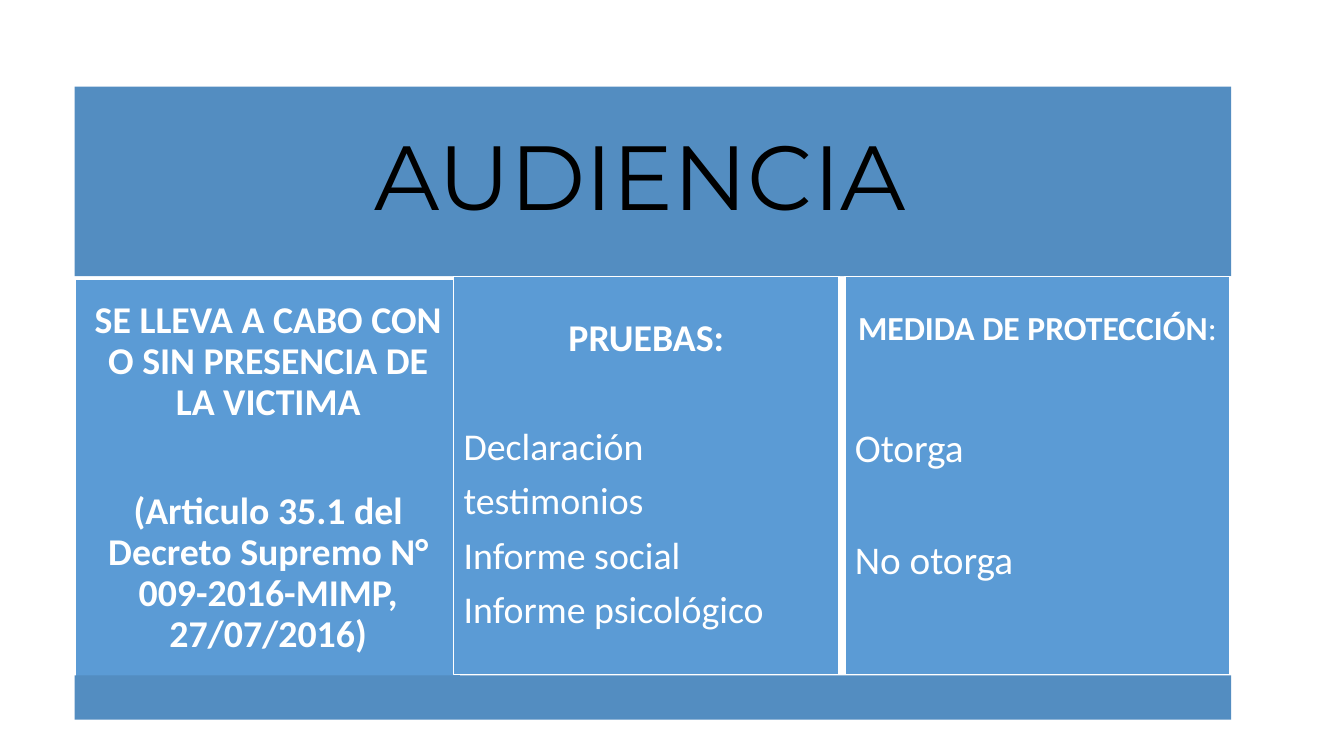
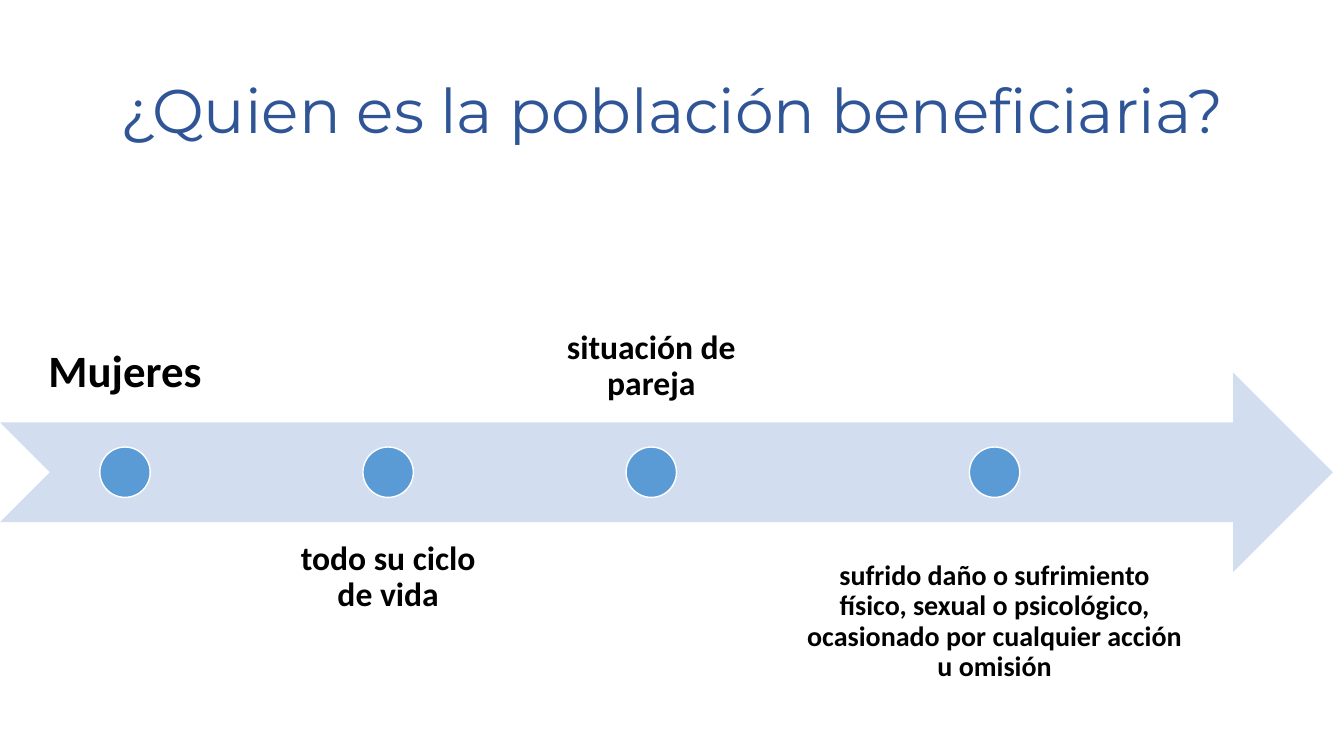
from pptx import Presentation
from pptx.dml.color import RGBColor
from pptx.enum.shapes import MSO_SHAPE as Shape
from pptx.enum.text import MSO_ANCHOR as Anchor, MSO_AUTO_SIZE as AutoSize, PP_ALIGN as Align
from pptx.util import Inches, Pt

COLORS = {
    "band": "538DC1",
    "panel": "5B9BD5",
    "arrow": "D2DEEF",
    "heading": "2F5597",
    "dark": "000000",
    "light": "FFFFFF",
}
TITLE_FONT, TEXT_FONT = "Montserrat", "Calibri"


def color(key):
    """Return the palette colour called key."""
    return RGBColor.from_string(COLORS[key])


def apply(target, values):
    """Set every attribute of target listed in values."""
    for attribute, value in values.items():
        setattr(target, attribute, value)


def place(shape, box):
    """Move a shape to a box of left, top, width and height in inches."""
    apply(shape, dict(zip(("left", "top", "width", "height"), map(Inches, box))))


def block(slide, kind, box, fill, outline=None):
    """Draw a flat preset shape, with an outline if one is named."""
    shape = slide.shapes.add_shape(kind, *map(Inches, box))
    shape.shadow.inherit = False
    shape.fill.solid()
    shape.fill.fore_color.rgb = color(fill)
    if outline:
        shape.line.color.rgb = color(outline)
        shape.line.width = Pt(1)
    else:
        shape.line.fill.background()
    return shape


def set_frame(frame, anchor, margin, **extra):
    """Format a text frame with equal margins, then apply any extra values."""
    margins = {f"margin_{side}": Inches(margin) for side in ("left", "top", "right", "bottom")}
    apply(frame, {"word_wrap": True, "auto_size": AutoSize.NONE,
                  "vertical_anchor": anchor, **margins, **extra})


def write(paragraph, runs, size, ink, font=TEXT_FONT, align=Align.CENTER, before=0):
    """Fill a paragraph with (text, bold) runs."""
    apply(paragraph, {"alignment": align, "line_spacing": 0.9, "space_before": Pt(before)})
    for text, bold in runs:
        run = paragraph.add_run()
        run.text = text
        apply(run.font, {"name": font, "size": Pt(size), "bold": bold})
        run.font.color.rgb = color(ink)


def set_title(slide, box, text, size, ink, margin, **extra):
    """Place and write the slide title."""
    title = slide.shapes.title
    place(title, box)
    set_frame(title.text_frame, Anchor.MIDDLE, margin, **extra)
    write(title.text_frame.paragraphs[0], [(text, False)], size, ink, TITLE_FONT)
    return title


def panel(slide, box, paragraphs, **extra):
    """Draw a column panel from (runs, size, align, gap before) paragraphs."""
    frame = block(slide, Shape.RECTANGLE, box, "panel", "light").text_frame
    set_frame(frame, Anchor.MIDDLE, 0.1, **extra)
    for index, (runs, size, align, gap) in enumerate(paragraphs):
        paragraph = frame.add_paragraph() if index else frame.paragraphs[0]
        write(paragraph, runs, size, "light", align=align, before=gap)


def hearing_slide(slide, box):
    """Build the hearing slide: title band, three panels and a closing band."""
    left, top, width, height = box
    title_height, footer_height, panel_width = 1.88, 0.44, 3.82
    title = set_title(slide, (left, top, width, title_height), "AUDIENCIA", 65, "dark",
                      0.27, margin_right=Inches(0.52))
    title.fill.solid()
    title.fill.fore_color.rgb = color("band")

    evidence = ["Declaración", "testimonios", "Informe social", "Informe psicológico"]
    presence = [
        ([("SE LLEVA A CABO CON O SIN PRESENCIA DE LA VICTIMA", True)], 27, Align.CENTER, 0),
        ([("(Articulo 35.1 del Decreto Supremo N° 009-2016-MIMP, 27/07/2016)", True)],
         27, Align.CENTER, 48.5),
    ]
    proof = [([("PRUEBAS:", True)], 27, Align.CENTER, 0)] + [
        ([(item, False)], 27, Align.JUSTIFY, 9.5 if index else 48.5)
        for index, item in enumerate(evidence)
    ]
    protection = [
        ([("MEDIDA DE PROTECCIÓN", True), (":", False)], 24, Align.CENTER, 0),
        ([("Otorga", False)], 28, Align.JUSTIFY, 57.5),
        ([("No otorga", False)], 28, Align.JUSTIFY, 50),
    ]
    columns = [(0.01, 0.03, presence, {}), (3.76, 0, proof, {}),
               (7.64, 0, protection, {"margin_bottom": Inches(0.66)})]
    for shift, drop, paragraphs, extra in columns:
        panel(slide, (left + shift, top + title_height + drop, panel_width, 3.95),
              paragraphs, **extra)
    block(slide, Shape.RECTANGLE,
          (left, top + height - footer_height, width, footer_height), "band")


def timeline(slide, box):
    """Draw a notched arrow with dots and labels alternating above and below."""
    left, top, width, height = box
    arrow_top, dot, gap = top + 0.75 * height - height / 2, 0.5, 0.13
    arrow_height = height * 0.4
    arrow_top = top + (height - arrow_height) / 2
    block(slide, Shape.NOTCHED_RIGHT_ARROW, (left, arrow_top, width, arrow_height), "arrow")

    milestones = [
        ("Mujeres", 32, 2.48, 0.25, Anchor.BOTTOM),
        ("todo su ciclo de vida", 24, 2.48, 0.19, Anchor.TOP),
        ("situación de pareja", 24, 2.48, 0.19, Anchor.BOTTOM),
        ("sufrido daño o sufrimiento físico, sexual o psicológico, "
         "ocasionado por cualquier acción u omisión", 20, 4.07, 0.16, Anchor.MIDDLE),
    ]
    step_left = left
    for index, (text, size, step_width, margin, anchor) in enumerate(milestones):
        label_top = top + height - arrow_height if index % 2 else top
        label = slide.shapes.add_textbox(
            *map(Inches, (step_left, label_top, step_width, arrow_height)))
        set_frame(label.text_frame, anchor, margin)
        write(label.text_frame.paragraphs[0], [(text, True)], size, "dark")
        block(slide, Shape.OVAL, (step_left + (step_width - dot) / 2,
                                  top + (height - dot) / 2, dot, dot), "panel", "light")
        step_left += step_width + gap


def beneficiaries_slide(slide, box):
    """Build the beneficiaries slide: a title over a timeline."""
    left, top, width, height = box
    set_title(slide, (left + 0.92, top + 0.4, 11.5, 1.45),
              "¿Quien es la población beneficiaria?", 44, "heading", 0.1)
    timeline(slide, (left, top + 2.21, width, height - 2.21))


def main():
    """Build and save the presentation."""
    deck = Presentation()
    apply(deck, {"slide_width": Inches(13.33), "slide_height": Inches(7.5)})
    title_only = deck.slide_layouts[5]
    pages = [(hearing_slide, (0.74, 0.86, 11.47, 6.28)),
             (beneficiaries_slide, (0, 0, 13.22, 7.16))]
    for build, box in pages:
        build(deck.slides.add_slide(title_only), box)
    deck.save("out.pptx")


if __name__ == "__main__":
    main()
